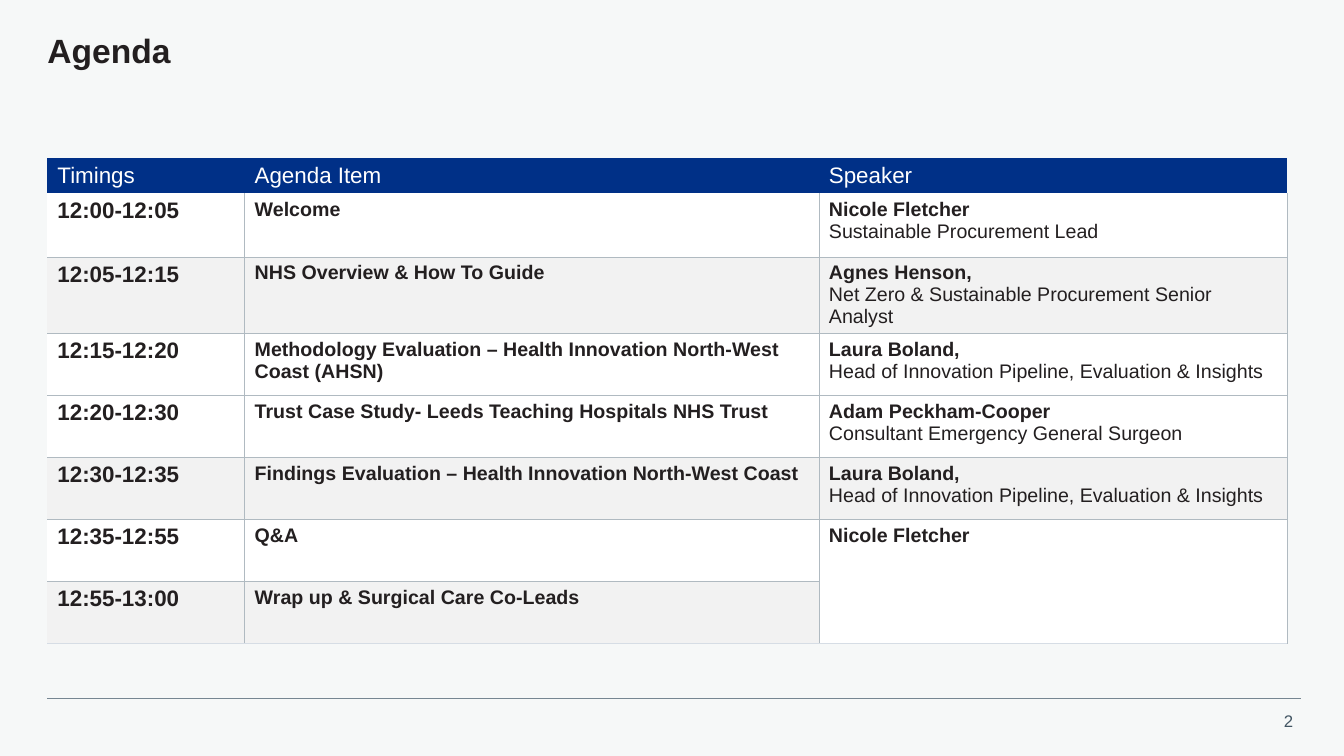
from dataclasses import dataclass

from lxml import etree
from pptx import Presentation
from pptx.dml.color import RGBColor
from pptx.enum.text import MSO_ANCHOR, MSO_AUTO_SIZE, PP_ALIGN
from pptx.enum.shapes import MSO_CONNECTOR
from pptx.oxml.ns import qn
from pptx.util import Pt

TOP, MIDDLE = MSO_ANCHOR.TOP, MSO_ANCHOR.MIDDLE
LEFT, RIGHT = PP_ALIGN.LEFT, PP_ALIGN.RIGHT
NO_FIT = MSO_AUTO_SIZE.NONE
STRAIGHT = MSO_CONNECTOR.STRAIGHT

FONT = "Arial"
COLOURS = {
    "background": "F6F8F8",
    "text": "231F20",
    "header": "003087",
    "white": "FFFFFF",
    "band": "F2F2F2",
    "grid": "B0BAC1",
    "table end": "D6DDE5",
    "footer line": "768692",
    "page number": "425563",
}
MARGIN = 33.84
TABLE_TOP = 113.04
COLUMN_WIDTHS = (140.9, 410.2, 334.5)
HEADINGS = ("Timings", "Agenda Item", "Speaker")
HEADER_HEIGHT, FIRST_HEIGHT, ROW_HEIGHT = 16, 45.6, 44.3


@dataclass(frozen=True)
class Session:
    time: str
    item: str
    speaker: str = ""
    role: str = ""
    banded: bool = False


SESSIONS = (
    Session("12:00-12:05", "Welcome", "Nicole Fletcher", "Sustainable Procurement Lead"),
    Session("12:05-12:15", "NHS Overview & How To Guide", "Agnes Henson,",
            "Net Zero & Sustainable Procurement Senior Analyst", True),
    Session("12:15-12:20", "Methodology Evaluation – Health Innovation North-West Coast (AHSN)",
            "Laura Boland,", "Head of Innovation Pipeline, Evaluation & Insights"),
    Session("12:20-12:30", "Trust Case Study- Leeds Teaching Hospitals NHS Trust",
            "Adam Peckham-Cooper", "Consultant Emergency General Surgeon"),
    Session("12:30-12:35", "Findings Evaluation – Health Innovation North-West Coast",
            "Laura Boland,", "Head of Innovation Pipeline, Evaluation & Insights", True),
    Session("12:35-12:55", "Q&A", "Nicole Fletcher"),
    Session("12:55-13:00", "Wrap up & Surgical Care Co-Leads", banded=True),
)


def colour(name: str) -> RGBColor:
    return RGBColor.from_string(COLOURS[name])


def add_run(paragraph, text: str, size: float, colour_name: str = "text", bold: bool = False) -> None:
    run = paragraph.add_run()
    run.text = text
    run.font.name = FONT
    run.font.size = Pt(size)
    run.font.bold = bold
    run.font.color.rgb = colour(colour_name)


def set_border(cell, side: str, colour_name: str = "", width: float = 0.5) -> None:
    """Draw one cell edge, or clear it when no colour is named."""
    properties = cell._tc.get_or_add_tcPr()
    line = etree.SubElement(properties, qn(f"a:ln{side}"), w=str(int(Pt(width))))
    if colour_name:
        fill = etree.SubElement(line, qn("a:solidFill"))
        etree.SubElement(fill, qn("a:srgbClr"), val=COLOURS[colour_name])
    else:
        etree.SubElement(line, qn("a:noFill"))


def format_cell(cell, row: int, column: int, fill_name: str) -> None:
    at_end = row == len(SESSIONS) or cell.is_merge_origin
    set_border(cell, "L", "grid" if row and column else "")
    set_border(cell, "R", "grid" if row else "")
    set_border(cell, "T", "grid" if row > 1 else "")
    if at_end:
        set_border(cell, "B", "table end", 0.75)
    else:
        set_border(cell, "B", "grid" if row else "")
    cell.fill.solid()
    cell.fill.fore_color.rgb = colour(fill_name)
    cell.vertical_anchor = TOP if row else MIDDLE


def add_title(slide) -> None:
    title = slide.shapes.title
    title.left, title.top, title.width, title.height = Pt(MARGIN), Pt(24.5), Pt(897.8), Pt(33.8)
    frame = title.text_frame
    frame.margin_left = frame.margin_right = frame.margin_top = frame.margin_bottom = 0
    frame.auto_size = NO_FIT
    frame.vertical_anchor = TOP
    paragraph = frame.paragraphs[0]
    paragraph.alignment = LEFT
    paragraph.line_spacing = 0.9
    add_run(paragraph, "Agenda", 24, bold=True)


def add_agenda(slide) -> None:
    heights = [HEADER_HEIGHT, FIRST_HEIGHT] + [ROW_HEIGHT] * (len(SESSIONS) - 1)
    frame = slide.shapes.add_table(len(heights), len(COLUMN_WIDTHS), Pt(MARGIN), Pt(TABLE_TOP),
                                   Pt(sum(COLUMN_WIDTHS)), Pt(sum(heights)))
    table = frame.table
    table.first_row = table.horz_banding = False
    for table_column, width in zip(table.columns, COLUMN_WIDTHS):
        table_column.width = Pt(width)
    for table_row, height in zip(table.rows, heights):
        table_row.height = Pt(height)

    # The last two sessions share a speaker
    last = len(SESSIONS)
    table.cell(last - 1, 2).merge(table.cell(last, 2))

    # Header row
    for column, heading in enumerate(HEADINGS):
        cell = table.cell(0, column)
        format_cell(cell, 0, column, "header")
        add_run(cell.text_frame.paragraphs[0], heading, 16, "white")

    # Session rows
    for row, session in enumerate(SESSIONS, start=1):
        texts = (session.time, session.item, session.speaker)
        for column, text in enumerate(texts):
            cell = table.cell(row, column)
            format_cell(cell, row, column, "band" if session.banded else "white")
            if text:
                add_run(cell.text_frame.paragraphs[0], text, 14 if column else 16, bold=True)
        if session.role:
            add_run(table.cell(row, 2).text_frame.add_paragraph(), session.role, 14)


def add_footer(slide) -> None:
    line = slide.shapes.add_connector(STRAIGHT, Pt(MARGIN), Pt(499), Pt(929.5), Pt(499))
    line.line.color.rgb = colour("footer line")
    line.line.width = Pt(0.5)
    etree.SubElement(line._element.spPr, qn("a:effectLst"))

    number = slide.shapes.add_textbox(Pt(901.4), Pt(504), Pt(29.5), Pt(21.8))
    number.text_frame.word_wrap = False
    paragraph = number.text_frame.paragraphs[0]
    paragraph.alignment = RIGHT
    add_run(paragraph, "2", 12, "page number")


def main() -> None:
    presentation = Presentation()
    presentation.slide_width, presentation.slide_height = Pt(960), Pt(540)
    slide = presentation.slides.add_slide(presentation.slide_layouts[5])
    slide.background.fill.solid()
    slide.background.fill.fore_color.rgb = colour("background")
    add_title(slide)
    add_agenda(slide)
    add_footer(slide)
    presentation.save("out.pptx")


if __name__ == "__main__":
    main()
